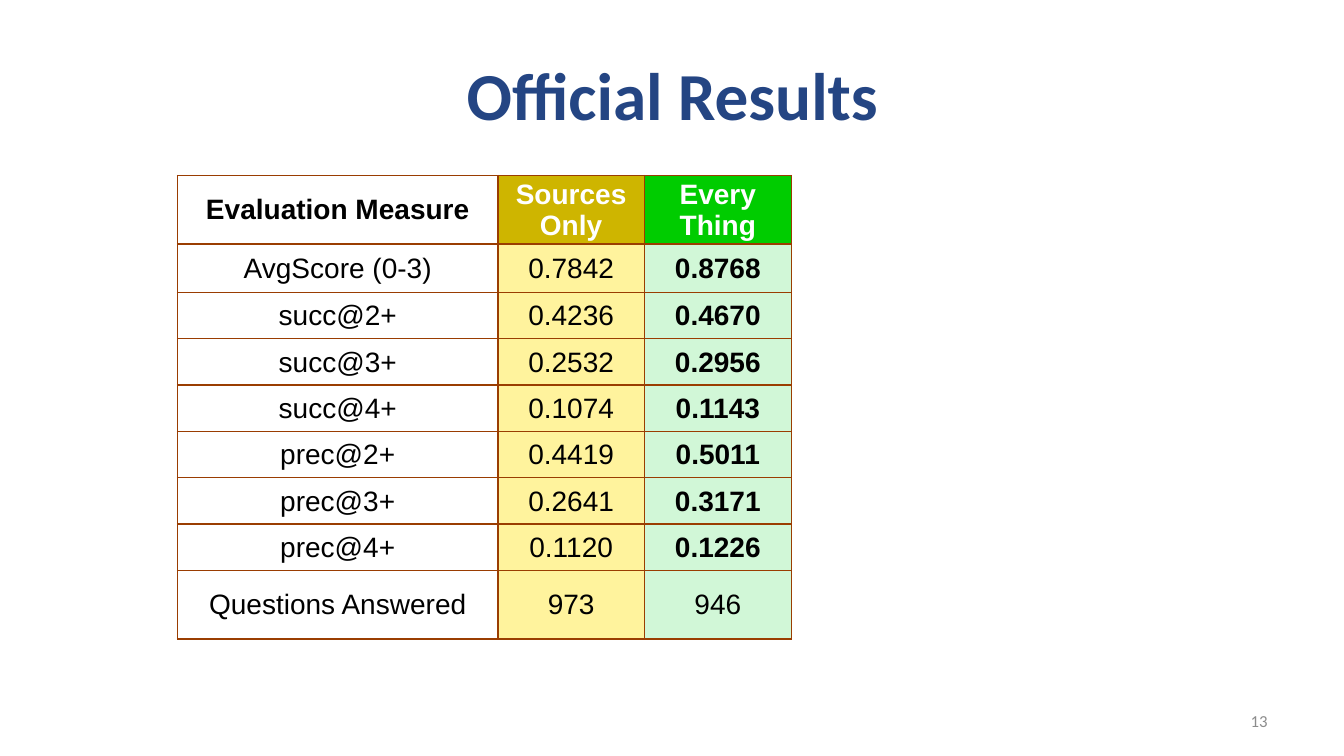
from lxml import etree
from pptx import Presentation
from pptx.dml.color import RGBColor
from pptx.enum.text import MSO_ANCHOR, PP_ALIGN
from pptx.oxml.ns import qn
from pptx.util import Inches, Pt

MIDDLE = MSO_ANCHOR.MIDDLE
CENTER, RIGHT = PP_ALIGN.CENTER, PP_ALIGN.RIGHT

THEME = {
    "heading_font": "Calibri", "table_font": "Arial",
    "title_size": 48, "table_size": 20, "number_size": 12,
    "title": "244583", "number": "8C8C8C", "text": "000000",
    "white": "FFFFFF", "border": "9A3D01",
    "head_fills": ["FFFFFF", "CEB500", "00CC00"],
    "body_fills": ["FFFFFF", "FFF39D", "D1F7D7"],
}

RESULTS = [
    ("Evaluation Measure", "Sources Only", "Every Thing"),
    ("AvgScore (0-3)", "0.7842", "0.8768"),
    ("succ@2+", "0.4236", "0.4670"),
    ("succ@3+", "0.2532", "0.2956"),
    ("succ@4+", "0.1074", "0.1143"),
    ("prec@2+", "0.4419", "0.5011"),
    ("prec@3+", "0.2641", "0.3171"),
    ("prec@4+", "0.1120", "0.1226"),
    ("Questions Answered", "973", "946"),
]
COL_WIDTHS = [3.18, 1.45, 1.46]
ROW_HEIGHTS = [0.68, 0.48] + [0.46] * 6 + [0.68]


def style_text(tf, align, font, size, color, bold=False):
    p = tf.paragraphs[0]
    p.alignment = align
    r = p.runs[0]
    r.font.name = font
    r.font.size = Pt(size)
    r.font.bold = bold
    r.font.color.rgb = RGBColor.from_string(color)


def add_borders(cell, color):
    tcPr = cell._tc.get_or_add_tcPr()
    for side in ("lnL", "lnR", "lnT", "lnB"):
        ln = etree.SubElement(tcPr, qn("a:" + side), w=str(Pt(1)))
        fill = etree.SubElement(ln, qn("a:solidFill"))
        etree.SubElement(fill, qn("a:srgbClr"), val=color)


prs = Presentation()
prs.slide_width, prs.slide_height = Inches(13.33), Inches(7.5)
s = prs.slides.add_slide(prs.slide_layouts[6])

# Title and slide number
for text, box, align, size, color, bold in [
    ("Official Results", (0.67, 0.3, 12, 1.25), CENTER,
     THEME["title_size"], THEME["title"], True),
    ("13", (9.56, 6.95, 3.11, 0.4), RIGHT,
     THEME["number_size"], THEME["number"], False),
]:
    tf = s.shapes.add_textbox(*map(Inches, box)).text_frame
    tf.word_wrap = True
    tf.vertical_anchor = MIDDLE
    tf.text = text
    style_text(tf, align, THEME["heading_font"], size, color, bold)

# Results table
table = s.shapes.add_table(
    len(ROW_HEIGHTS), len(COL_WIDTHS), Inches(1.76), Inches(1.74),
    Inches(sum(COL_WIDTHS)), Inches(sum(ROW_HEIGHTS))).table
for column, width in zip(table.columns, COL_WIDTHS):
    column.width = Inches(width)
for row, height in zip(table.rows, ROW_HEIGHTS):
    row.height = Inches(height)

last = len(RESULTS) - 1
for i, values in enumerate(RESULTS):
    for j, value in enumerate(values):
        cell = table.cell(i, j)
        cell.text = value
        cell.vertical_anchor = MIDDLE
        cell.margin_left = cell.margin_right = cell.margin_top = Inches(0.01)
        cell.margin_bottom = 0
        add_borders(cell, THEME["border"])
        fills = THEME["head_fills"] if i == 0 else THEME["body_fills"]
        cell.fill.solid()
        cell.fill.fore_color.rgb = RGBColor.from_string(fills[j])
        # Headers and the best scores are bold
        bold = i == 0 or (j == 2 and i < last)
        color = THEME["white"] if i == 0 and j > 0 else THEME["text"]
        style_text(cell.text_frame, CENTER, THEME["table_font"],
                   THEME["table_size"], color, bold)

prs.save("out.pptx")
